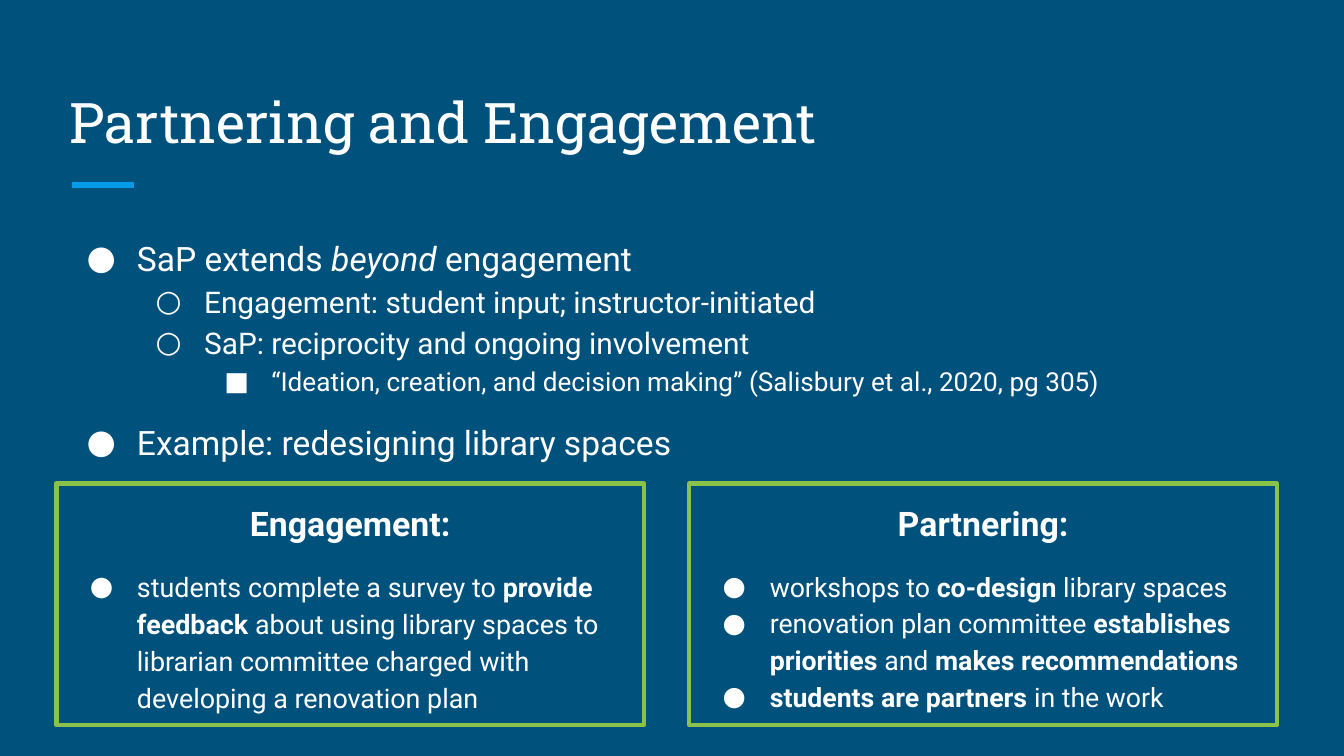
from lxml import etree
from pptx import Presentation
from pptx.dml.color import RGBColor
from pptx.enum.shapes import MSO_CONNECTOR, MSO_SHAPE
from pptx.enum.text import MSO_ANCHOR, MSO_AUTO_SIZE, PP_ALIGN
from pptx.oxml.ns import qn
from pptx.util import Cm, Pt

LEFT, CENTER = PP_ALIGN.LEFT, PP_ALIGN.CENTER
TOP, BOTTOM = MSO_ANCHOR.TOP, MSO_ANCHOR.BOTTOM
NO_AUTOFIT = MSO_AUTO_SIZE.NONE
RECTANGLE, STRAIGHT = MSO_SHAPE.RECTANGLE, MSO_CONNECTOR.STRAIGHT

NAVY = RGBColor(0x00, 0x51, 0x7C)
BLUE = RGBColor(0x03, 0x9B, 0xE5)
GREEN = RGBColor(0x8B, 0xC3, 0x4A)
WHITE = RGBColor(0xFF, 0xFF, 0xFF)
BODY_FONT, TITLE_FONT = "Roboto", "Roboto Slab"

TITLE_ONLY = 5
BULLETS = "●○■"
INDENT = 1.27
PADDING = Cm(0.25)
LEFT_EDGE = 1.07
CARD_WIDTH, CARD_GAP = 11.1, 0.86

OUTLINE = [
    (0, 18, 0, ["SaP extends ", ("beyond", "italic"), " engagement"]),
    (1, 16, 0, ["Engagement: student input; instructor-initiated"]),
    (1, 16, 0, ["SaP: reciprocity and ongoing involvement"]),
    (2, 14, 0, ["“Ideation, creation, and decision making” "
                "(Salisbury et al., 2020, pg 305)"]),
    (0, 18, 10, ["Example: redesigning library spaces"]),
]
CARDS = [
    ("Engagement:", 14.4, [
        ["students complete a survey to ", ("provide feedback", "bold"),
         " about using library spaces to librarian committee charged with "
         "developing a renovation plan"],
    ]),
    ("Partnering:", 14.3, [
        ["workshops to ", ("co-design", "bold"), " library spaces"],
        ["renovation plan committee ", ("establishes priorities", "bold"),
         " and ", ("makes recommendations", "bold")],
        [("students are partners", "bold"), " in the work"],
    ]),
]


def prepare_frame(shape, anchor=TOP):
    frame = shape.text_frame
    frame.word_wrap = True
    frame.auto_size = NO_AUTOFIT
    frame.vertical_anchor = anchor
    frame.margin_left = frame.margin_right = PADDING
    frame.margin_top = frame.margin_bottom = PADDING
    return frame


def add_bullet(paragraph, level, hanging):
    properties = paragraph._p.get_or_add_pPr()
    properties.set("marL", str(Cm(INDENT * (level + 1))))
    properties.set("indent", str(-Cm(hanging)))
    color = etree.SubElement(properties, qn("a:buClr"))
    etree.SubElement(color, qn("a:srgbClr"), val=str(WHITE))
    etree.SubElement(properties, qn("a:buFont"), typeface=BODY_FONT)
    etree.SubElement(properties, qn("a:buChar"), char=BULLETS[level])


def write_paragraph(frame, runs, *, size, font=BODY_FONT, align=LEFT, bold=False,
                    before=0, spacing=1.15, level=None, hanging=0.89):
    """Fill the empty first paragraph or add one; a run is text or (text, style)."""
    first = frame.paragraphs[0]
    paragraph = frame.add_paragraph() if first.runs else first
    paragraph.alignment = align
    paragraph.line_spacing = spacing
    paragraph.space_before = Pt(before)
    if level is not None:
        paragraph.level = level
        add_bullet(paragraph, level, hanging)
    for item in runs:
        text, style = (item, None) if isinstance(item, str) else item
        run = paragraph.add_run()
        run.text = text
        run.font.name = font
        run.font.size = Pt(size)
        run.font.color.rgb = WHITE
        run.font.bold = bold or style == "bold"
        run.font.italic = style == "italic"


def add_title(slide, left, top, width, height):
    title = slide.shapes.title
    title.left, title.top = Cm(left), Cm(top)
    title.width, title.height = Cm(width), Cm(height)
    write_paragraph(prepare_frame(title, BOTTOM), ["Partnering and Engagement"],
                    size=30, font=TITLE_FONT, spacing=1)


def add_accent(slide, left, top, width):
    accent = slide.shapes.add_connector(
        STRAIGHT, Cm(left), Cm(top), Cm(left + width), Cm(top))
    accent.line.color.rgb = BLUE
    accent.line.width = Pt(3)
    etree.SubElement(accent._element.spPr, qn("a:effectLst"))


def add_outline(slide, left, top, width, height):
    box = slide.shapes.add_textbox(Cm(left), Cm(top), Cm(width), Cm(height))
    frame = prepare_frame(box)
    hanging = {18: 0.95, 16: 0.92, 14: 0.89}
    for level, size, before, runs in OUTLINE:
        write_paragraph(frame, runs, size=size, before=before, level=level,
                        hanging=hanging[size])


def add_card(slide, left, top, width, height, heading, size, points):
    card = slide.shapes.add_shape(
        RECTANGLE, Cm(left), Cm(top), Cm(width), Cm(height))
    card.shadow.inherit = False
    card.fill.background()
    card.line.color.rgb = GREEN
    card.line.width = Pt(2.25)
    frame = prepare_frame(card)
    write_paragraph(frame, [heading], size=18.1, align=CENTER, bold=True)
    for index, runs in enumerate(points):
        write_paragraph(frame, runs, size=size, level=0,
                        before=12 if index == 0 else 0)


def main():
    presentation = Presentation()
    presentation.slide_width, presentation.slide_height = Cm(25.4), Cm(14.29)
    slide = presentation.slides.add_slide(presentation.slide_layouts[TITLE_ONLY])
    slide.background.fill.solid()
    slide.background.fill.fore_color.rgb = NAVY

    add_accent(slide, 1.37, 3.5, 1.17)
    add_title(slide, LEFT_EDGE, 1.27, 23.24, 1.9)
    add_outline(slide, LEFT_EDGE, 4.14, 23.67, 3.4)
    for index, (heading, size, points) in enumerate(CARDS):
        left = LEFT_EDGE + index * (CARD_WIDTH + CARD_GAP)
        add_card(slide, left, 9.14, CARD_WIDTH, 4.57, heading, size, points)
    presentation.save("out.pptx")


if __name__ == "__main__":
    main()
